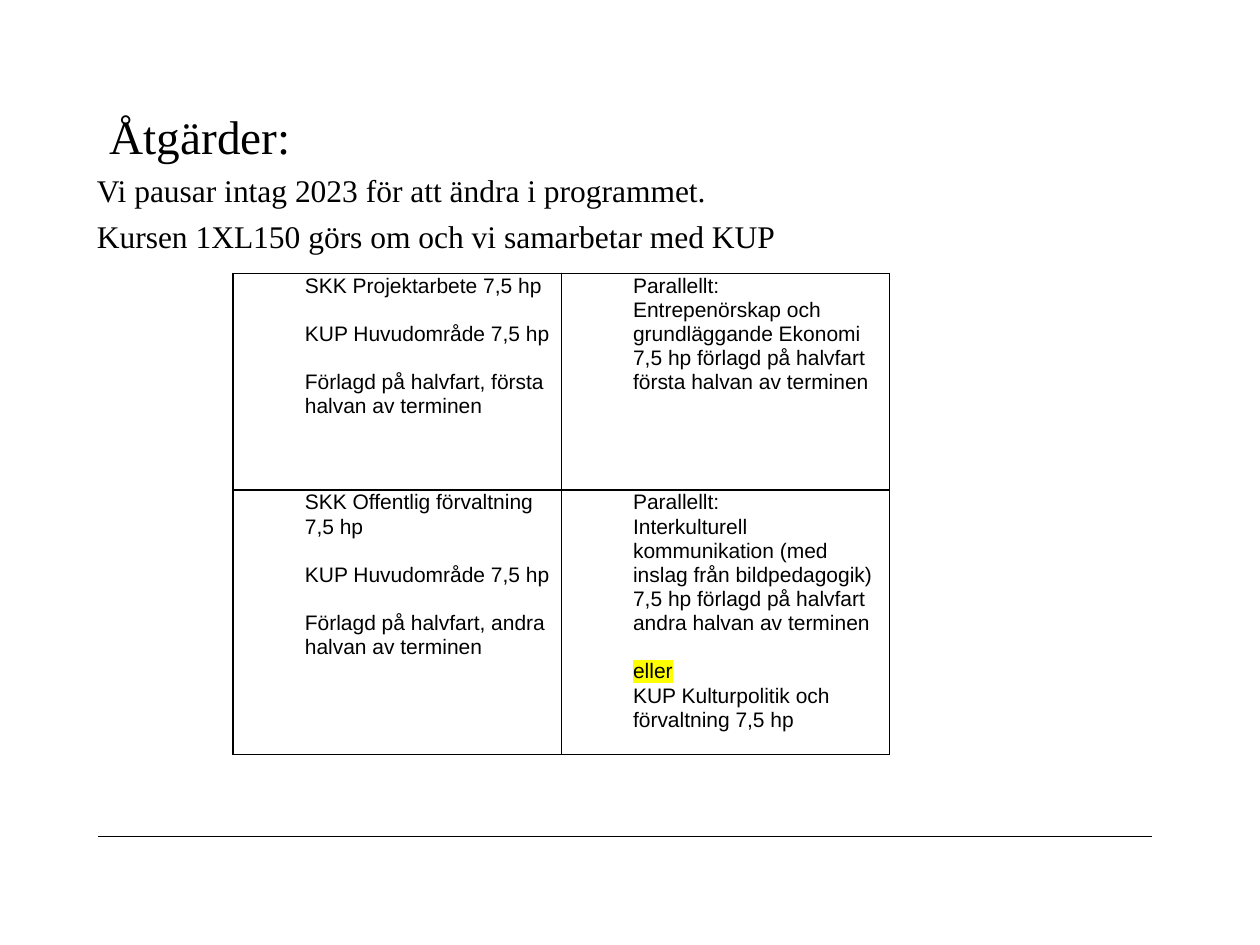
from lxml.etree import SubElement
from pptx import Presentation
from pptx.dml.color import RGBColor
from pptx.enum.shapes import MSO_CONNECTOR as Connector
from pptx.enum.text import MSO_ANCHOR as Anchor, MSO_AUTO_SIZE as AutoSize, PP_ALIGN as Align
from pptx.oxml import parse_xml
from pptx.oxml.ns import nsdecls, qn
from pptx.util import Inches, Pt

BLACK = "000000"
SERIF, SANS = "Times New Roman", "Arial"
LEADING = 13.8
INTRO = [
    "Vi pausar intag 2023 för att ändra i programmet.",
    "Kursen 1XL150 görs om och vi samarbetar med KUP",
]
COURSES = [
    [
        [("SKK Projektarbete 7,5 hp", 1), ("KUP Huvudområde 7,5 hp", 1),
         ("Förlagd på halvfart, första halvan av terminen", 0)],
        [("Parallellt:", 0),
         ("Entrepenörskap och grundläggande Ekonomi 7,5 hp förlagd på halvfart "
          "första halvan av terminen", 0)],
    ],
    [
        [("SKK Offentlig förvaltning 7,5 hp", 1), ("KUP Huvudområde 7,5 hp", 1),
         ("Förlagd på halvfart, andra halvan av terminen", 0)],
        [("Parallellt:", 0),
         ("Interkulturell kommunikation (med inslag från bildpedagogik) 7,5 hp "
          "förlagd på halvfart andra halvan av terminen", 1),
         ("eller", 0), ("KUP Kulturpolitik och förvaltning 7,5 hp", 0)],
    ],
]
MARKED = {"eller": "FFFF00"}


def color(value):
    """Turn a hex string into a colour."""
    return RGBColor.from_string(value)


def add_span(para, text, font, size):
    """Add one formatted run to a paragraph."""
    span = para.add_run()
    span.text = text
    span.font.name, span.font.size = font, Pt(size)
    span.font.color.rgb = color(BLACK)
    return span


def highlight(span, value):
    """Put a marker colour behind a run."""
    fill = span.font.fill._xPr.find(qn("a:solidFill"))
    fill.addnext(parse_xml(
        f'<a:highlight {nsdecls("a")}><a:srgbClr val="{value}"/></a:highlight>'))


def paragraphs(frame, items):
    """Yield a paragraph for each item, starting with the existing one."""
    for index, item in enumerate(items):
        yield (frame.paragraphs[0] if index == 0 else frame.add_paragraph()), item


def place_title(page, box, text):
    """Move the title placeholder to its box and write the heading."""
    title = page.shapes.title
    title.left, title.top, title.width, title.height = map(Inches, box)
    frame = title.text_frame
    frame.auto_size, frame.vertical_anchor = AutoSize.NONE, Anchor.TOP
    para = frame.paragraphs[0]
    para.alignment, para.line_spacing = Align.LEFT, Pt(27)
    add_span(para, text, SERIF, 27)


def place_intro(page, box, lines):
    """Write the introductory lines above the table."""
    frame = page.shapes.add_textbox(*map(Inches, box)).text_frame
    frame.word_wrap = True
    for para, line in paragraphs(frame, lines):
        para.space_before = Pt(0 if line == lines[0] else 4.3)
        add_span(para, line, SERIF, 18)


def border_cell(cell):
    """Draw a thin black line on every side of a cell."""
    properties = cell._tc.get_or_add_tcPr()
    for index, side in enumerate(("lnL", "lnR", "lnT", "lnB")):
        line = parse_xml(f'<a:{side} {nsdecls("a")} w="{Pt(1)}"/>')
        fill = SubElement(line, qn("a:solidFill"))
        SubElement(fill, qn("a:srgbClr"), val=BLACK)
        properties.insert(index, line)


def fill_cell(cell, entries):
    """Write the indented course entries of one cell."""
    cell.margin_left = cell.margin_right = Inches(0.07)
    cell.margin_top = cell.margin_bottom = 0
    cell.fill.background()
    border_cell(cell)
    for para, (text, gap_lines) in paragraphs(cell.text_frame, entries):
        para._p.get_or_add_pPr().set("marL", str(Inches(0.5)))
        para.line_spacing, para.space_after = Pt(LEADING), Pt(LEADING * gap_lines)
        span = add_span(para, text, SANS, 12)
        if text in MARKED:
            highlight(span, MARKED[text])


def place_courses(page, box, rows, heights):
    """Build the table of parallel courses."""
    table = page.shapes.add_table(len(rows), len(rows[0]), *map(Inches, box)).table
    table.first_row = table.horz_banding = False
    for column in table.columns:
        column.width = Inches(box[2] / len(rows[0]))
    for row, height, entries in zip(table.rows, heights, rows):
        row.height = Inches(height)
        for cell, content in zip(row.cells, entries):
            fill_cell(cell, content)


def place_rule(page, left, right, top):
    """Draw the thin line above the footer."""
    rule = page.shapes.add_connector(
        Connector.STRAIGHT, *map(Inches, (left, top, right, top)))
    rule.line.color.rgb, rule.line.width = color(BLACK), Pt(0.5)
    SubElement(rule._element.spPr, qn("a:effectLst"))


def main():
    """Build and save the slide."""
    deck = Presentation()
    deck.slide_width, deck.slide_height = Inches(10), Inches(7.5)
    page = deck.slides.add_slide(deck.slide_layouts[5])
    heights = (1.72, 2.1)
    place_rule(page, 0.78, 9.14, 6.64)
    place_title(page, (0.77, 0.88, 8.36, 0.83), "Åtgärder:")
    place_intro(page, (0.67, 1.31, 8.48, 0.8), INTRO)
    place_courses(page, (1.85, 2.17, 5.21, sum(heights)), COURSES, heights)
    deck.save("out.pptx")


if __name__ == "__main__":
    main()
